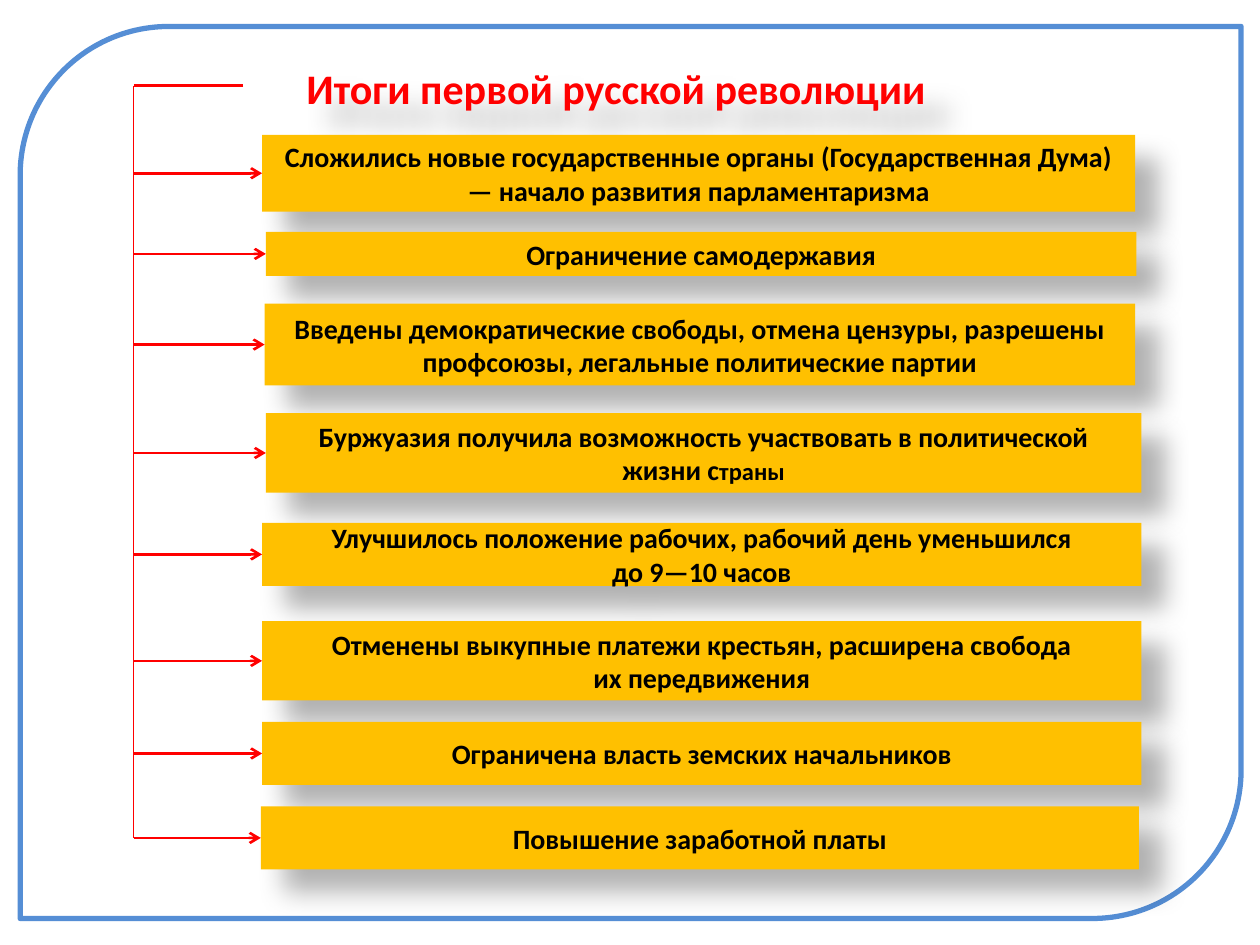
"""Build a slide listing the results of the first Russian revolution."""
import pptx
import pptx.dml.color
import pptx.enum.shapes
import pptx.enum.text
import pptx.oxml
import pptx.oxml.ns
import pptx.util
from pptx.util import Inches

COLORS = {"frame": "558ED5", "red": "FF0000", "box": "FFC000", "text": "000000"}
RGB = {k: pptx.dml.color.RGBColor.from_string(v) for k, v in COLORS.items()}
NS = pptx.oxml.ns.nsdecls("a")
SHADOW = (
    f'<a:outerShdw {NS} blurRad="190500" dist="228600" dir="2700000" algn="tl" rotWithShape="0">'
    f'<a:srgbClr val="{COLORS["text"]}"><a:alpha val="30000"/></a:srgbClr></a:outerShdw>'
)
SPINE_X, SPINE_TOP = 1.06, 0.68
TITLE_FONT = {"name": "Calibri", "size": pptx.util.Pt(24), "bold": True}
BOX_FONT = {"name": "Calibri", "size": pptx.util.Pt(16), "bold": True}
SMALL_FONT = {**BOX_FONT, "size": pptx.util.Pt(14)}

BOXES = [
    (2.08, 1.07, 6.93, 0.61, [["Сложились новые государственные органы (Государственная Дума) "
                               "— начало развития парламентаризма"]]),
    (2.11, 1.84, 6.91, 0.35, [["Ограничение самодержавия"]]),
    (2.1, 2.41, 6.91, 0.65, [["Введены демократические свободы, отмена цензуры, разрешены "
                              "профсоюзы, легальные политические партии"]]),
    (2.11, 3.28, 6.95, 0.63, [["Буржуазия получила возможность участвовать в политической "
                               "жизни с", "траны"]]),
    (2.08, 4.15, 6.98, 0.5, [["Улучшилось положение рабочих, рабочий день уменьшился"],
                             ["до 9—10 часов"]]),
    (2.08, 4.93, 6.98, 0.63, [["Отменены выкупные платежи крестьян, расширена свобода"],
                              ["их передвижения"]]),
    (2.08, 5.73, 6.98, 0.5, [["Ограничена власть земских начальников"]]),
    (2.07, 6.4, 6.97, 0.5, [["Повышение заработной платы"]]),
]


def write(sp, paragraphs, fonts, color):
    """Fill a shape with centred paragraphs and give it the soft shadow."""
    sp.shadow.inherit = False
    sp._element.spPr.find(pptx.oxml.ns.qn("a:effectLst")).append(pptx.oxml.parse_xml(SHADOW))
    tf = sp.text_frame
    tf.word_wrap = True
    tf.vertical_anchor = pptx.enum.text.MSO_ANCHOR.MIDDLE
    for i, runs in enumerate(paragraphs):
        p = tf.add_paragraph() if i else tf.paragraphs[0]
        p.alignment = pptx.enum.text.PP_ALIGN.CENTER
        for text, font in zip(runs, fonts):
            r = p.add_run()
            r.text = text
            for name, value in font.items():
                setattr(r.font, name, value)
            r.font.color.rgb = RGB[color]


def line(s, x1, y1, x2, y2, width, target=None):
    """Draw a red line, with an arrowhead joined to the target box if given."""
    c = s.shapes.add_connector(pptx.enum.shapes.MSO_CONNECTOR.STRAIGHT,
                               Inches(x1), Inches(y1), Inches(x2), Inches(y2))
    c.line.color.rgb = RGB["red"]
    c.line.width = pptx.util.Pt(width)
    if target is not None:
        c.end_connect(target, 1)
        c.line._get_or_add_ln().append(pptx.oxml.parse_xml(f'<a:tailEnd {NS} type="arrow"/>'))
    c._element.spPr.append(pptx.oxml.parse_xml(f"<a:effectLst {NS}/>"))


prs = pptx.Presentation()
prs.slide_width, prs.slide_height = Inches(10), Inches(7.5)
s = prs.slides.add_slide(prs.slide_layouts[5])

title = s.shapes.title
title.left, title.top, title.width, title.height = map(Inches, (0.39, 0.36, 9, 0.67))
write(title, [["Итоги первой русской революции"]], [TITLE_FONT], "red")

frame = s.shapes.add_shape(pptx.enum.shapes.MSO_SHAPE.ROUND_2_DIAG_RECTANGLE,
                           *map(Inches, (0.16, 0.21, 9.69, 7.08)))
frame.shadow.inherit = False
frame.fill.background()
frame.line.color.rgb = RGB["frame"]
frame.line.width = pptx.util.Pt(3)

boxes = []
for left, top, width, height, paragraphs in BOXES:
    sp = s.shapes.add_shape(pptx.enum.shapes.MSO_SHAPE.RECTANGLE,
                            *map(Inches, (left, top, width, height)))
    sp.fill.solid()
    sp.fill.fore_color.rgb = RGB["box"]
    sp.line.fill.background()
    write(sp, paragraphs, [BOX_FONT, SMALL_FONT], "text")
    boxes.append(sp)

line(s, 1.93, SPINE_TOP, SPINE_X, SPINE_TOP, 1.5)
line(s, SPINE_X, SPINE_TOP, SPINE_X, 6.65, 0.75)
for sp, (left, top, width, height, paragraphs) in zip(boxes, BOXES):
    middle = top + height / 2
    line(s, SPINE_X, middle, left, middle, 1.5, sp)

prs.save("out.pptx")
